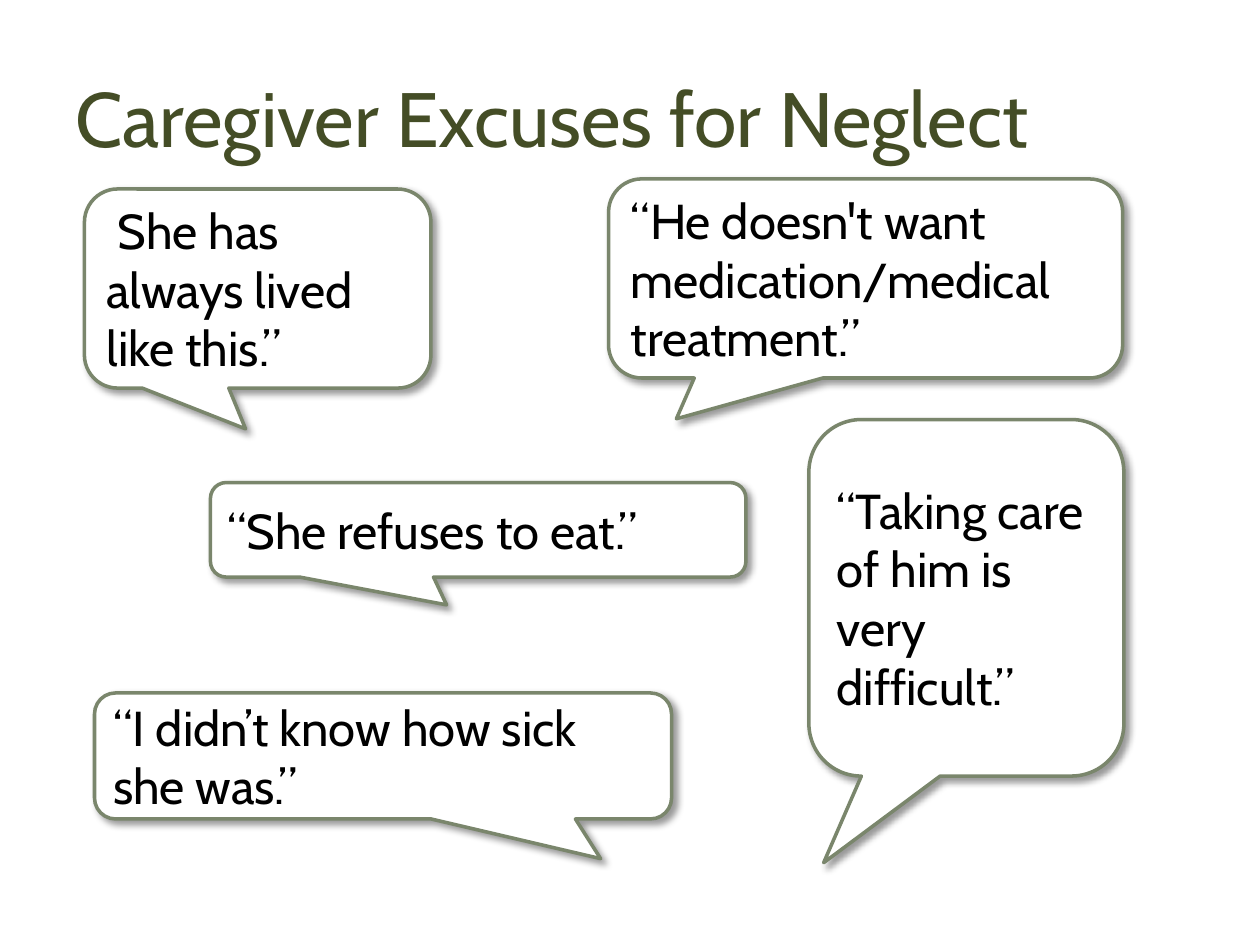
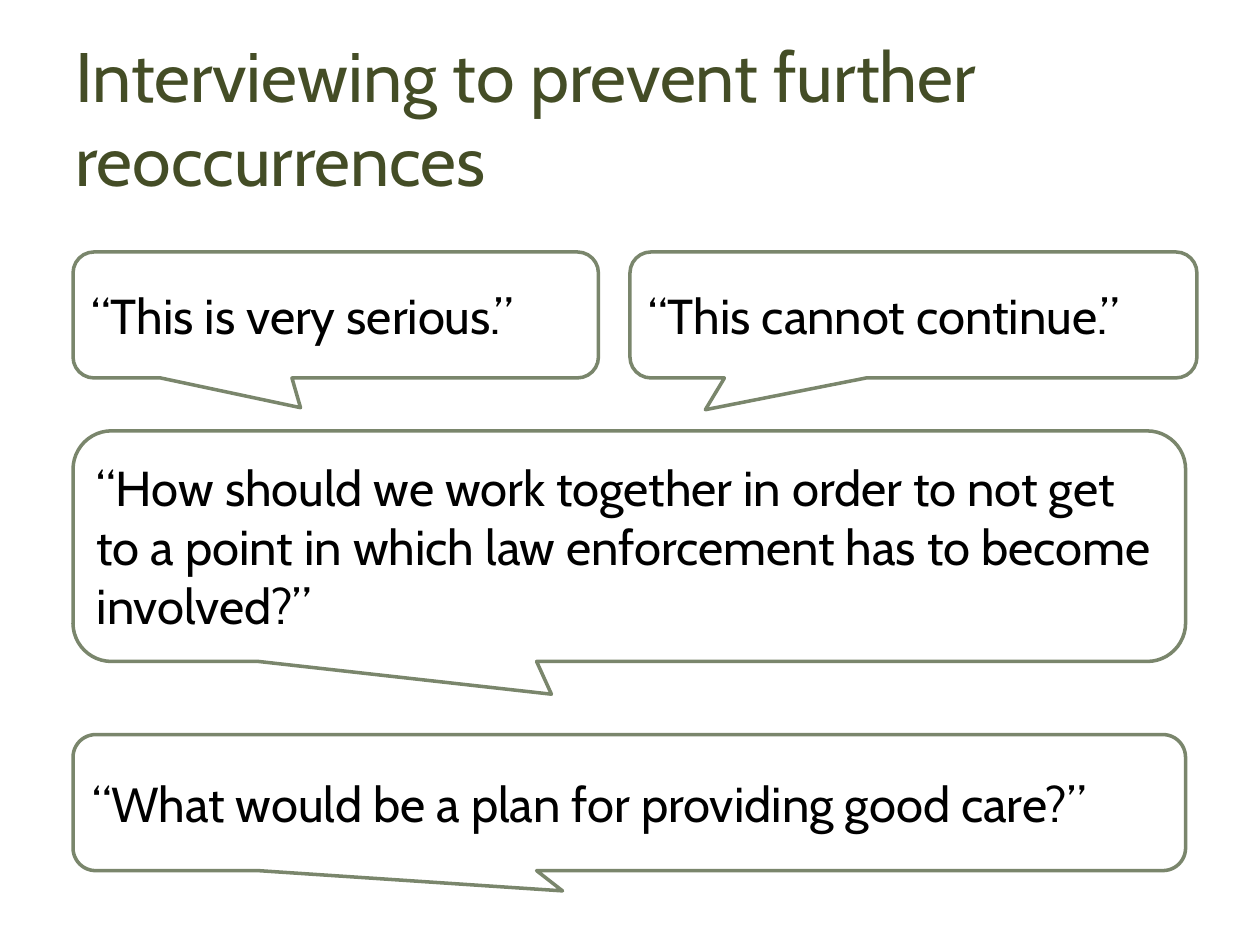
from dataclasses import dataclass

from lxml import etree
from pptx import Presentation
from pptx.dml.color import RGBColor
from pptx.enum.shapes import MSO_SHAPE as Shape
from pptx.enum.text import MSO_ANCHOR as Anchor, PP_ALIGN as Align
from pptx.oxml.ns import qn
from pptx.util import Inches, Pt

FONT = "Cabin"
COLORS = {
    "title": "444D26",
    "bubble": "FFFFFF",
    "outline": "7A866C",
    "text": "000000",
    "shadow": "000000",
}


@dataclass(frozen=True)
class Bubble:
    """A speech bubble; the tail tip is a share of its size, from its centre."""
    text: str
    left: float
    top: float
    width: float
    height: float
    tail_x: float
    tail_y: float
    first_line_indent: float = 0


@dataclass(frozen=True)
class BubbleSlide:
    title: str
    title_size: int
    title_width: float
    bubbles: tuple[Bubble, ...]
    shadow: bool = False


LEFT_EDGE, FULL_WIDTH = 0.58, 8.83

SLIDES = (
    BubbleSlide("Caregiver Excuses for Neglect", 44, 9, (
        Bubble("She has always lived like this.”",
               0.67, 1.5, 2.75, 1.58, -0.035, 0.705, first_line_indent=0.09),
        Bubble("“He doesn't want medication/medical treatment.”",
               4.83, 1.42, 4.08, 1.58, -0.368, 0.705),
        Bubble("“She refuses to eat.”", 1.67, 3.83, 4.25, 0.75, -0.059, 0.794),
        Bubble("“I didn’t know how sick she was.”",
               0.75, 5.5, 4.58, 1, 0.377, 0.815),
        Bubble("“Taking care of him is very difficult.”",
               6.42, 3.33, 2.5, 2.83, -0.453, 0.743),
    ), shadow=True),
    BubbleSlide("Interviewing to prevent further reoccurrences", 40, 9.5, (
        Bubble("“This is very serious.”",
               LEFT_EDGE, 2, 4.17, 1, -0.067, 0.736),
        Bubble("“This cannot continue.”", 5, 2, 4.5, 1, -0.367, 0.752),
        Bubble("“How should we work together in order to not get to a point "
               "in which law enforcement has to become involved?”",
               LEFT_EDGE, 3.42, FULL_WIDTH, 1.83, -0.07, 0.642),
        Bubble("“What would be a plan for providing good care?”",
               LEFT_EDGE, 5.83, FULL_WIDTH, 1.08, -0.06, 0.649),
    )),
)


def rgb(name: str) -> RGBColor:
    return RGBColor.from_string(COLORS[name])


def write(shape, text: str, *, size: int = 28, color: str = "text",
          indent: float = 0) -> None:
    """Fill the shape with one paragraph, left and middle aligned."""
    frame = shape.text_frame
    frame.word_wrap = True
    frame.vertical_anchor = Anchor.MIDDLE
    paragraph = frame.paragraphs[0]
    paragraph.alignment = Align.LEFT
    if indent:
        paragraph._p.get_or_add_pPr().set("indent", str(Inches(indent)))
    run = paragraph.add_run()
    run.text = text
    run.font.name = FONT
    run.font.size = Pt(size)
    run.font.color.rgb = rgb(color)


def add_shadow(shape) -> None:
    effects = shape._element.spPr.find(qn("a:effectLst"))
    shadow = etree.SubElement(
        effects, qn("a:outerShdw"), blurRad=str(Pt(4)), dist=str(Pt(3)),
        dir=str(45 * 60000), algn="tl", rotWithShape="0")
    color = etree.SubElement(shadow, qn("a:srgbClr"), val=COLORS["shadow"])
    etree.SubElement(color, qn("a:alpha"), val="40000")


def add_bubble(slide, bubble: Bubble, shadow: bool) -> None:
    shape = slide.shapes.add_shape(
        Shape.ROUNDED_RECTANGULAR_CALLOUT,
        Inches(bubble.left), Inches(bubble.top),
        Inches(bubble.width), Inches(bubble.height))
    shape.adjustments[0] = bubble.tail_x
    shape.adjustments[1] = bubble.tail_y
    shape.fill.solid()
    shape.fill.fore_color.rgb = rgb("bubble")
    shape.line.color.rgb = rgb("outline")
    shape.line.width = Pt(2)
    shape.shadow.inherit = False
    if shadow:
        add_shadow(shape)
    write(shape, bubble.text, indent=bubble.first_line_indent)


def add_bubble_slide(presentation, content: BubbleSlide) -> None:
    slide = presentation.slides.add_slide(presentation.slide_layouts[6])
    title = slide.shapes.add_textbox(
        Inches(0.5), Inches(0.3), Inches(content.title_width), Inches(1.25))
    write(title, content.title, size=content.title_size, color="title")
    for bubble in content.bubbles:
        add_bubble(slide, bubble, content.shadow)


def main() -> None:
    presentation = Presentation()
    presentation.slide_width = Inches(10)
    presentation.slide_height = Inches(7.5)
    for content in SLIDES:
        add_bubble_slide(presentation, content)
    presentation.save("out.pptx")


if __name__ == "__main__":
    main()
